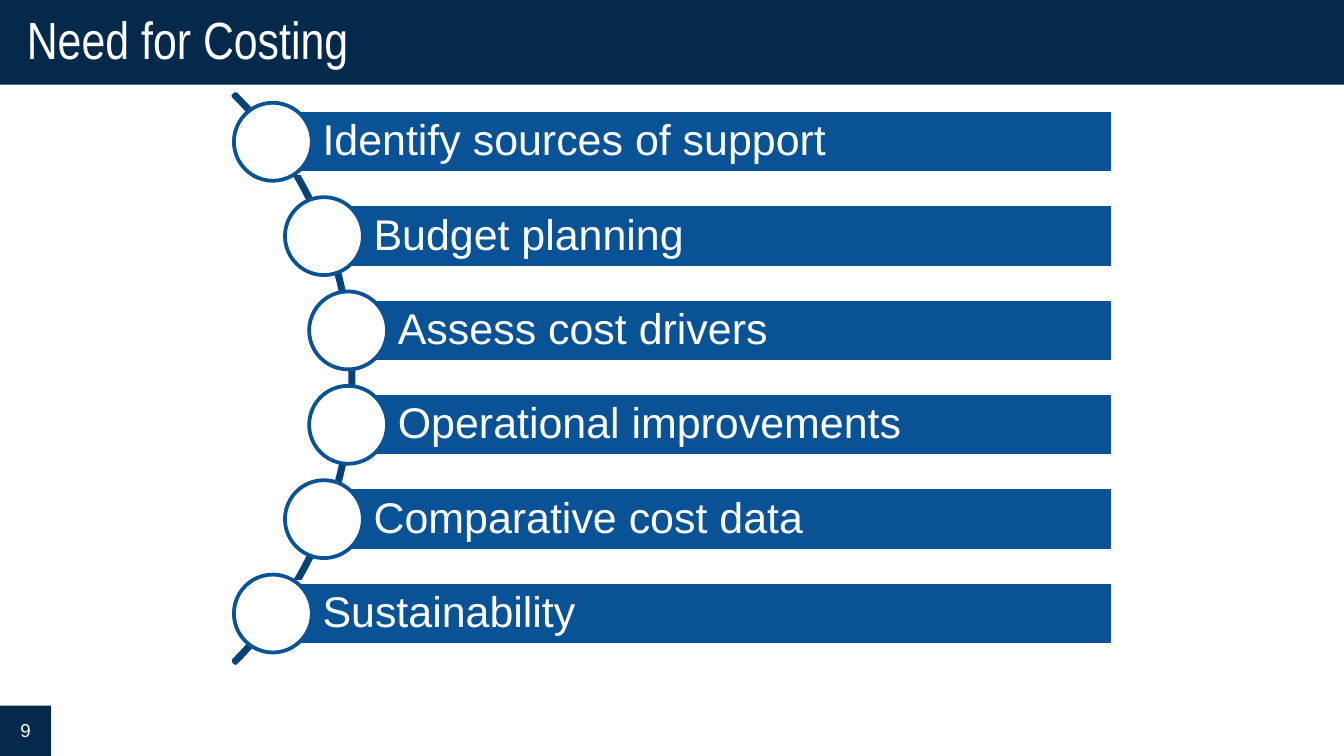
from pptx import Presentation
from pptx.dml.color import RGBColor
from pptx.enum.shapes import MSO_SHAPE as Shape
from pptx.enum.text import MSO_ANCHOR as Anchor, MSO_AUTO_SIZE as AutoSize, PP_ALIGN as Align
from pptx.util import Inches, Pt

NAVY = RGBColor(0x04, 0x29, 0x4A)
ARC_BLUE = RGBColor(0x06, 0x42, 0x77)
BLUE = RGBColor(0x08, 0x52, 0x95)
WHITE = RGBColor(0xFF, 0xFF, 0xFF)

# Reason for costing and the left edge of its bar
REASONS = [
    ("Identify sources of support", 2.03),
    ("Budget planning", 2.41),
    ("Assess cost drivers", 2.59),
    ("Operational improvements", 2.59),
    ("Comparative cost data", 2.41),
    ("Sustainability", 2.03),
]
FIRST_BAR_TOP = 0.82
LAST_BAR_TOP = 4.33
BAR_STEP = (LAST_BAR_TOP - FIRST_BAR_TOP) / (len(REASONS) - 1)
BAR_HEIGHT = 0.47
BAR_RIGHT = 8.28
CIRCLE_SIZE = 0.58


def write_text(shape, text, size, font="Arial", align=Align.LEFT, margins=(0.1, 0.05, 0.1, 0.05)):
    frame = shape.text_frame
    frame.text = text
    frame.word_wrap = True
    frame.auto_size = AutoSize.NONE
    frame.vertical_anchor = Anchor.MIDDLE
    frame.margin_left, frame.margin_top, frame.margin_right, frame.margin_bottom = map(Inches, margins)
    paragraph = frame.paragraphs[0]
    paragraph.alignment = align
    paragraph.line_spacing = 0.9
    run_font = paragraph.runs[0].font
    run_font.name = font
    run_font.size = Pt(size)
    run_font.color.rgb = WHITE


def add_shape(slide, kind, left, top, width, height, fill=None, line=None):
    shape = slide.shapes.add_shape(kind, Inches(left), Inches(top), Inches(width), Inches(height))
    shape.shadow.inherit = False
    if fill is None:
        shape.fill.background()
    else:
        shape.fill.solid()
        shape.fill.fore_color.rgb = fill
    if line is None:
        shape.line.fill.background()
    else:
        shape.line.color.rgb = line
        shape.line.width = Pt(2)
    return shape


def format_title(slide, text):
    title = slide.shapes.title
    title.left, title.top = Inches(0), Inches(0)
    title.width, title.height = Inches(10), Inches(0.63)
    title.fill.solid()
    title.fill.fore_color.rgb = NAVY
    write_text(title, text, 28, font="Arial Narrow", margins=(0.2, 0.1, 0.2, 0.1))


def add_page_number(slide, number):
    badge = add_shape(slide, Shape.RECTANGLE, 0, 5.25, 0.38, 0.38, fill=NAVY)
    write_text(badge, number, 10, align=Align.CENTER)


def add_arc(slide):
    arc = add_shape(slide, Shape.BLOCK_ARC, -3.36, -0.18, 5.99, 5.99, line=ARC_BLUE)
    # Start at 315°, end at 45° (0.6 units per degree), then the band thickness
    for index, value in enumerate((315 * 0.6, 45 * 0.6, 0.004)):
        arc.adjustments[index] = value


def add_reason(slide, text, left, top):
    bar = add_shape(slide, Shape.RECTANGLE, left, top, BAR_RIGHT - left, BAR_HEIGHT, fill=BLUE, line=WHITE)
    write_text(bar, text, 23, margins=(0.37, 0.06, 0.06, 0.06))
    # Circle centred on the left end of the bar
    add_shape(slide, Shape.OVAL, left - CIRCLE_SIZE / 2, top + (BAR_HEIGHT - CIRCLE_SIZE) / 2,
              CIRCLE_SIZE, CIRCLE_SIZE, fill=WHITE, line=BLUE)


def main():
    # Widescreen 16:9 slide
    presentation = Presentation()
    presentation.slide_width = Inches(10)
    presentation.slide_height = Inches(10 * 9 / 16)
    slide = presentation.slides.add_slide(presentation.slide_layouts[5])

    # Header and footer
    format_title(slide, "Need for Costing")
    add_page_number(slide, "9")

    # Curved list
    add_arc(slide)
    for index, (text, left) in enumerate(REASONS):
        add_reason(slide, text, left, FIRST_BAR_TOP + index * BAR_STEP)

    presentation.save("out.pptx")


if __name__ == "__main__":
    main()
